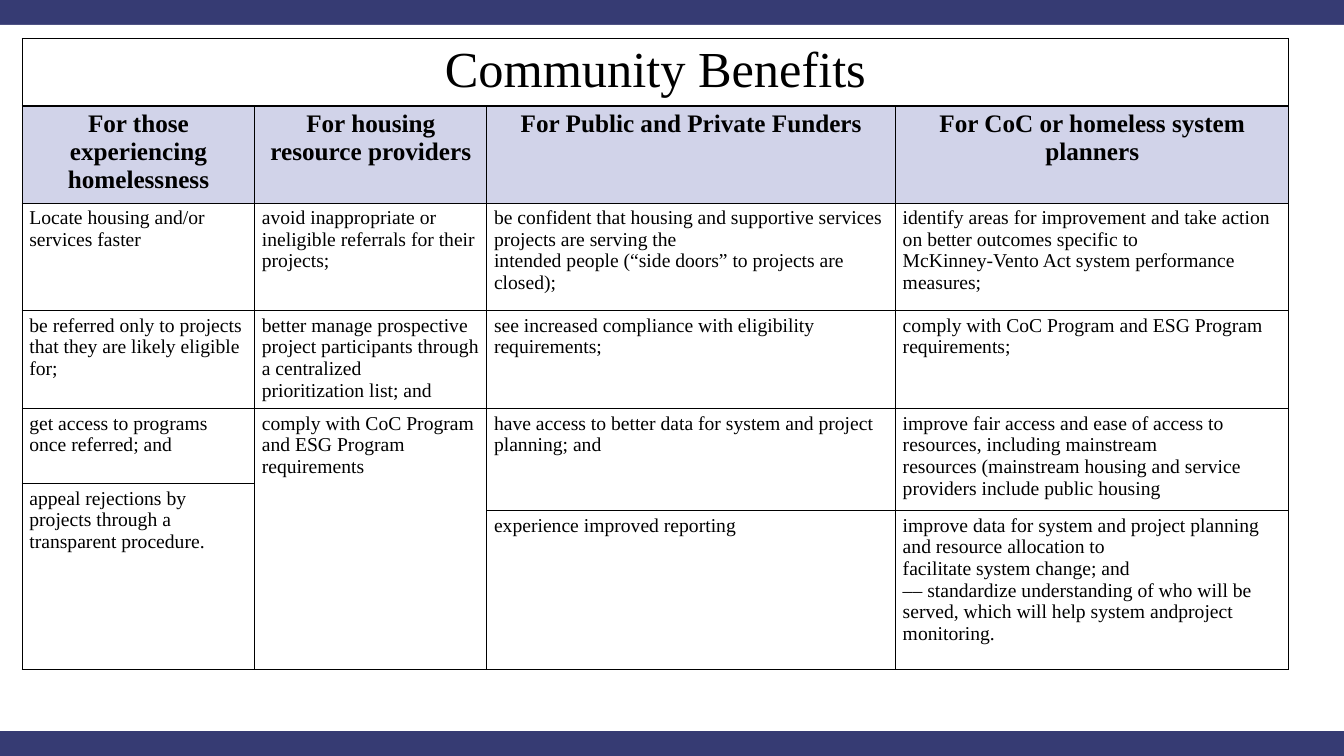
import pptx
import pptx.dml.color
import pptx.enum.shapes
import pptx.enum.text
import pptx.oxml
import pptx.oxml.ns
import pptx.util
from pptx.util import Cm

COLORS = {"navy": "363B73", "white": "FFFFFF", "lavender": "D1D3E9", "black": "000000"}
FONT = "Times New Roman"
COLUMN_WIDTHS = [5.86, 5.85, 10.3, 9.91]
ROW_HEIGHTS = [1.7, 2.45, 2.71, 2.47, 1.89, 0.68, 4]
HEADINGS = [
    "For those experiencing homelessness",
    "For housing resource providers",
    "For Public and Private Funders",
    "For CoC or homeless system planners",
]
# Each column lists (first row, last row, text)
BENEFITS = [
    [
        (2, 2, "Locate housing and/or services faster"),
        (3, 3, "be referred only to projects that they are likely eligible for;"),
        (4, 4, "get access to programs once referred; and"),
        (5, 6, "appeal rejections by projects through a transparent procedure."),
    ],
    [
        (2, 2, "avoid inappropriate or ineligible referrals for their projects;"),
        (3, 3, "better manage prospective project participants through a centralized\n"
               "prioritization list; and"),
        (4, 6, "comply with CoC Program and ESG Program requirements"),
    ],
    [
        (2, 2, "be confident that housing and supportive services projects are serving the\n"
               "intended people (“side doors” to projects are closed);"),
        (3, 3, "see increased compliance with eligibility requirements;"),
        (4, 5, "have access to better data for system and project planning; and"),
        (6, 6, "experience improved reporting"),
    ],
    [
        (2, 2, "identify areas for improvement and take action on better outcomes specific to\n"
               "McKinney-Vento Act system performance measures;"),
        (3, 3, "comply with CoC Program and ESG Program requirements;"),
        (4, 5, "improve fair access and ease of access to resources, including mainstream\n"
               "resources (mainstream housing and service providers include public housing"),
        (6, 6, "improve data for system and project planning and resource allocation to\n"
               "facilitate system change; and\n"
               "‒‒ standardize understanding of who will be served, "
               "which will help system andproject monitoring."),
    ],
]


def color(name):
    return pptx.dml.color.RGBColor.from_string(COLORS[name])


def write(frame, text, size=14, bold=False, centered=False):
    """Write one paragraph for each line of text."""
    for index, line in enumerate(text.split("\n")):
        para = frame.add_paragraph() if index else frame.paragraphs[0]
        if centered:
            para.alignment = pptx.enum.text.PP_ALIGN.CENTER
        span = para.add_run()
        span.text = line
        span.font.name = FONT
        span.font.size = pptx.util.Pt(size)
        span.font.bold = bold
        span.font.color.rgb = color("black")


def add_borders(cell):
    properties = cell._tc.get_or_add_tcPr()
    for side in "LRTB":
        properties.append(pptx.oxml.parse_xml(
            f'<a:ln{side} {pptx.oxml.ns.nsdecls("a")} w="12700"><a:solidFill>'
            f'<a:srgbClr val="{COLORS["black"]}"/></a:solidFill></a:ln{side}>'))


def add_panel(page, left, top, width, height):
    """Cover the navy background with white, leaving a band above and below."""
    panel = page.shapes.add_shape(
        pptx.enum.shapes.MSO_SHAPE.RECTANGLE, left, top, width, height)
    panel.shadow.inherit = False
    panel.fill.solid()
    panel.fill.fore_color.rgb = color("white")
    panel.line.fill.background()


def add_benefits(page, left, top, width, height):
    table = page.shapes.add_table(
        len(ROW_HEIGHTS), len(COLUMN_WIDTHS), left, top, width, height).table
    table.first_row = table.horz_banding = False
    for column, share in zip(table.columns, COLUMN_WIDTHS):
        column.width = int(width * share / sum(COLUMN_WIDTHS))
    for row, share in zip(table.rows, ROW_HEIGHTS):
        row.height = int(height * share / sum(ROW_HEIGHTS))
    for row_index, row in enumerate(table.rows):
        for cell in row.cells:
            cell.margin_left = cell.margin_right = Cm(0.18)
            cell.margin_top = cell.margin_bottom = Cm(0.1)
            add_borders(cell)
            cell.fill.solid()
            cell.fill.fore_color.rgb = color("lavender" if row_index == 1 else "white")

    title = table.cell(0, 0)
    title.merge(table.cell(0, len(COLUMN_WIDTHS) - 1))
    write(title.text_frame, "Community Benefits", size=36, centered=True)
    for index, (heading, benefits) in enumerate(zip(HEADINGS, BENEFITS)):
        write(table.cell(1, index).text_frame, heading, size=18, bold=True, centered=True)
        for first, last, text in benefits:
            cell = table.cell(first, index)
            if last > first:
                cell.merge(table.cell(last, index))
            write(cell.text_frame, text)


def main():
    deck = pptx.Presentation()
    deck.slide_width, deck.slide_height = Cm(33.87), Cm(19.05)
    page = deck.slides.add_slide(deck.slide_layouts[6])
    page.background.fill.solid()
    page.background.fill.fore_color.rgb = color("navy")
    band = Cm(0.63)
    add_panel(page, 0, band, deck.slide_width, deck.slide_height - 2 * band)
    add_benefits(page, Cm(0.56), Cm(0.97), Cm(sum(COLUMN_WIDTHS)), Cm(sum(ROW_HEIGHTS)))
    deck.save("out.pptx")


if __name__ == "__main__":
    main()
